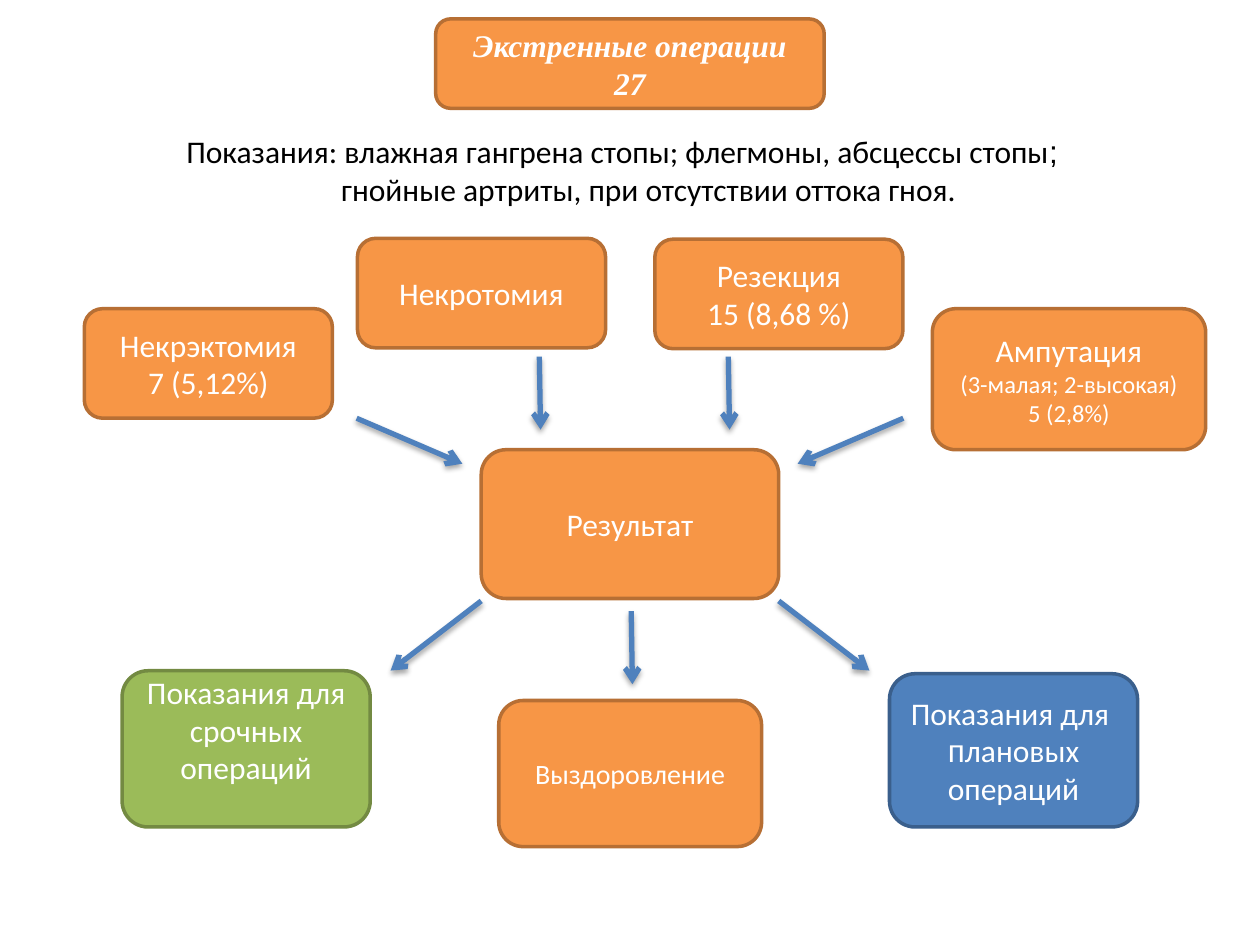
import lxml.etree
import pptx
import pptx.dml.color
import pptx.enum.shapes
import pptx.enum.text
import pptx.oxml
import pptx.oxml.ns
import pptx.util

Pt = pptx.util.Pt
RGB = pptx.dml.color.RGBColor.from_string
COLORS = {
    "orange": "F79646", "orange edge": "B76F34",
    "green": "9BBB59", "green edge": "738A42",
    "blue": "4F81BD", "blue edge": "3A5F8C",
    "light text": "FFFFFF", "dark text": "000000",
}
TITLE_FONT = {"name": "Times New Roman", "bold": True, "italic": True}
ARIAL = {"name": "Arial"}
SMALL = {"size": Pt(14)}


def write_lines(frame, lines, color, alignment):
    """Fill a frame with paragraphs, each a list of (text, font changes)."""
    frame.word_wrap = True
    for number, runs in enumerate(lines):
        paragraph = frame.paragraphs[0] if number == 0 else frame.add_paragraph()
        paragraph.alignment = alignment
        for text, changes in runs:
            run = paragraph.add_run()
            run.text = text
            run.font.color.rgb = RGB(COLORS[color])
            for attribute, value in ({"name": "Calibri", "size": Pt(18)} | changes).items():
                setattr(run.font, attribute, value)


presentation = pptx.Presentation()
presentation.slide_width, presentation.slide_height = Pt(720), Pt(540)
slide = presentation.slides.add_slide(presentation.slide_layouts[6])

# Indications under the title
indications = slide.shapes.add_textbox(Pt(99.4), Pt(72), Pt(564.5), Pt(50.4)).text_frame
write_lines(indications, [
    [("Показания: влажная гангрена стопы; флегмоны, абсцессы стопы", {}), (";", ARIAL)],
    [("гнойные артриты, при отсутствии оттока гноя.", {})],
], "dark text", pptx.enum.text.PP_ALIGN.LEFT)
second_line = indications.paragraphs[1].runs[0].font
indent = indications.paragraphs[1]._p.get_or_add_pPr()
indent.set("marL", str(Pt(88.5)))
indent.set("indent", "0")

# Boxes: left, top, width, height, colour, lines
WIDTH, HEIGHT = 141.8, 62.6
boxes = [
    (249, 10.8, 222, 51.1, "orange",
     [[("Экстренные операции", TITLE_FONT)], [("27", TITLE_FONT)]]),
    (48.2, 176.4, WIDTH, HEIGHT, "orange", [[("Некрэктомия", {})], [("7 (5,12%)", {})]]),
    (204.3, 136.2, WIDTH, HEIGHT, "orange", [[("Некротомия", {})]]),
    (374.2, 136.7, WIDTH, HEIGHT, "orange", [[("Резекция", {})], [("15 (8,68 %)", {})]]),
    (532.8, 176.4, 156.2, 80.6, "orange",
     [[("Ампутация", {})], [("(3-малая; 2-высокая)", SMALL)], [("5 (2,8%)", SMALL)]]),
    (275, 257, 170, 85, "orange", [[("Результат", {})]]),
    (69.8, 383.3, WIDTH, 89.3, "green", [[("Показания для срочных операций", {})]]),
    (285, 400.3, 150.2, 83.5, "orange", [[("Выздоровление", {"size": Pt(16)})]]),
    (508.3, 385, WIDTH, 87.6, "blue",
     [[("Показания для ", {})], [("п", ARIAL), ("лановых", {})], [("операций", {})]]),
]
for left, top, width, height, color, lines in boxes:
    box = slide.shapes.add_shape(
        pptx.enum.shapes.MSO_SHAPE.ROUNDED_RECTANGLE, Pt(left), Pt(top), Pt(width), Pt(height))
    box.shadow.inherit = False
    box.fill.solid()
    box.fill.fore_color.rgb = RGB(COLORS[color])
    box.line.color.rgb = RGB(COLORS[color + " edge"])
    box.line.width = Pt(2)
    box.text_frame.vertical_anchor = pptx.enum.text.MSO_ANCHOR.MIDDLE
    if color == "green":
        box.text_frame.margin_bottom = Pt(25.6)  # lifts the text by half a line
    write_lines(box.text_frame, lines, "light text", pptx.enum.text.PP_ALIGN.CENTER)

# Arrows: the slanted ones are mirrored about the middle of the slide
MIDDLE = 360
arrows = [(x, top, x + 0.7, bottom) for x, top, bottom in
          [(308.2, 203.8, 245.5), (416.2, 203.8, 245.5), (360.7, 349.2, 391)]]
for start, start_y, end, end_y in [(156.2, 239, 95.8, 265), (85, 343.4, 136.8, 383.2)]:
    for side in (-1, 1):
        arrows.append((MIDDLE + side * start, start_y, MIDDLE + side * end, end_y))

SHADOW = (
    f'<a:effectLst {pptx.oxml.ns.nsdecls("a")}>'
    f'<a:outerShdw blurRad="{Pt(3.1)}" dist="{Pt(1.8)}" dir="5400000" rotWithShape="0">'
    f'<a:srgbClr val="{COLORS["dark text"]}"><a:alpha val="35000"/></a:srgbClr>'
    '</a:outerShdw></a:effectLst>')
for points in arrows:
    arrow = slide.shapes.add_connector(
        pptx.enum.shapes.MSO_CONNECTOR.STRAIGHT, *[Pt(point) for point in points])
    arrow.line.color.rgb = RGB(COLORS["blue"])
    arrow.line.width = Pt(3)
    lxml.etree.SubElement(
        arrow.line._get_or_add_ln(), pptx.oxml.ns.qn("a:tailEnd"), type="arrow")
    arrow._element.spPr.append(pptx.oxml.parse_xml(SHADOW))

presentation.save("out.pptx")
